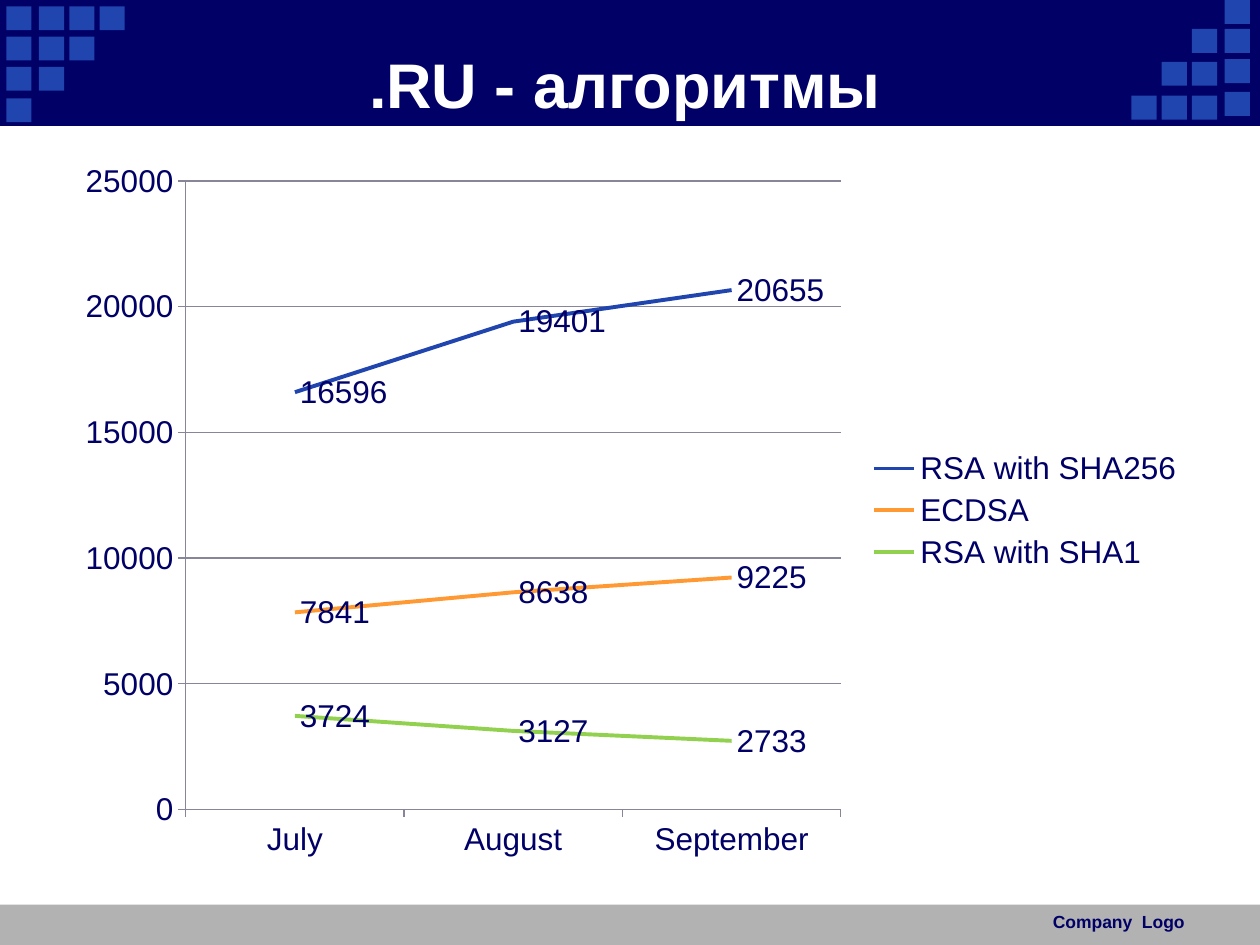
from lxml import etree
from pptx import Presentation
from pptx.chart.data import CategoryChartData
from pptx.dml.color import RGBColor
from pptx.enum.chart import (XL_CHART_TYPE, XL_LABEL_POSITION, XL_LEGEND_POSITION,
                             XL_MARKER_STYLE, XL_TICK_MARK)
from pptx.enum.shapes import MSO_SHAPE
from pptx.enum.text import MSO_ANCHOR, PP_ALIGN
from pptx.util import Inches, Pt

RECT = MSO_SHAPE.RECTANGLE
LINE = XL_CHART_TYPE.LINE
RIGHT_LABEL = XL_LABEL_POSITION.RIGHT
RIGHT_LEGEND = XL_LEGEND_POSITION.RIGHT
NO_MARK = XL_MARKER_STYLE.NONE
TICK_OUT = XL_TICK_MARK.OUTSIDE
TOP, MIDDLE = MSO_ANCHOR.TOP, MSO_ANCHOR.MIDDLE
CENTER, RIGHT = PP_ALIGN.CENTER, PP_ALIGN.RIGHT

FONT = "Arial"
COLORS = {
    "navy": "000066", "blue": "2045AE", "orange": "FF9933",
    "green": "92D050", "gray": "B2B2B2", "axis": "868698", "white": "FFFFFF",
}
TITLE = ".RU - алгоритмы"
FOOTER = "Company  Logo"
MONTHS = ["July", "August", "September"]
SERIES = [
    ("RSA with SHA256", [16596, 19401, 20655], "blue"),
    ("ECDSA", [7841, 8638, 9225], "orange"),
    ("RSA with SHA1", [3724, 3127, 2733], "green"),
]

# Corner tiles step down from four to one: column lefts, then row tops
LEFT_COLS = [0.05, 0.31, 0.55, 0.79]
LEFT_ROWS = [0.05, 0.29, 0.53, 0.78]
RIGHT_COLS = [9.46, 9.22, 8.98]
RIGHT_ROWS = [0.23, 0.49, 0.76]
EDGE_COL, EDGE_ROWS = 9.72, [0, 0.23, 0.47, 0.73]
TILE = (0.2, 0.19)


def rgb(name):
    return RGBColor.from_string(COLORS[name])


def add_rect(slide, box, color):
    rect = slide.shapes.add_shape(RECT, *map(Inches, box))
    rect.shadow.inherit = False
    rect.fill.solid()
    rect.fill.fore_color.rgb = rgb(color)
    rect.line.fill.background()


def set_font(font, size, color, bold=False):
    font.name, font.size, font.bold = FONT, Pt(size), bold
    font.color.rgb = rgb(color)


def add_text(slide, text, box, size, color, align, anchor=TOP, bold=True):
    frame = slide.shapes.add_textbox(*map(Inches, box)).text_frame
    frame.word_wrap = True
    frame.vertical_anchor = anchor
    para = frame.paragraphs[0]
    para.alignment = align
    run = para.add_run()
    run.text = text
    set_font(run.font, size, color, bold)


def add_tiles(slide):
    spots = [(x, y) for i, x in enumerate(LEFT_COLS)
             for y in LEFT_ROWS[:len(LEFT_ROWS) - i]]
    spots += [(x, y) for i, x in enumerate(RIGHT_COLS) for y in RIGHT_ROWS[i:]]
    spots += [(EDGE_COL, y) for y in EDGE_ROWS]
    for spot in spots:
        add_rect(slide, spot + TILE, "blue")


def style_line(line, color, width):
    line.color.rgb = rgb(color)
    line.width = Pt(width)


def add_graph(slide, box):
    data = CategoryChartData()
    data.categories = MONTHS
    for name, vals, _ in SERIES:
        data.add_series(name, vals)
    chart = slide.shapes.add_chart(LINE, *map(Inches, box), data).chart
    set_font(chart.font, 18, "navy")
    chart.has_title = False
    chart.has_legend = True
    chart.legend.position = RIGHT_LEGEND
    chart.legend.include_in_layout = False

    for axis in (chart.category_axis, chart.value_axis):
        axis.major_tick_mark = TICK_OUT
        style_line(axis.format.line, "axis", 0.75)
    scale = chart.value_axis
    scale.minimum_scale, scale.maximum_scale, scale.major_unit = 0, 25000, 5000
    scale.has_major_gridlines = True
    style_line(scale.major_gridlines.format.line, "axis", 0.75)

    for series, (_, _, color) in zip(chart.plots[0].series, SERIES):
        series.smooth = False
        series.marker.style = NO_MARK
        style_line(series.format.line, color, 2.25)
        labels = series.data_labels
        labels.show_value = True
        labels.position = RIGHT_LABEL
        set_font(labels.font, 18, "navy")


def main():
    deck = Presentation()
    deck.slide_width, deck.slide_height = Inches(10), Inches(7.5)
    slide = deck.slides.add_slide(deck.slide_layouts[6])
    add_rect(slide, (0, 7.18, 10, 0.32), "gray")
    add_rect(slide, (0, 0, 10, 1), "navy")
    add_tiles(slide)
    add_text(slide, TITLE, (0.92, 0.35, 8.08, 0.62), 36, "white", CENTER, MIDDLE)
    add_graph(slide, (0.5, 1.18, 9, 5.74))
    add_text(slide, FOOTER, (7.83, 7.18, 1.67, 0.32), 10, "navy", RIGHT)
    deck.save("out.pptx")


if __name__ == "__main__":
    main()
